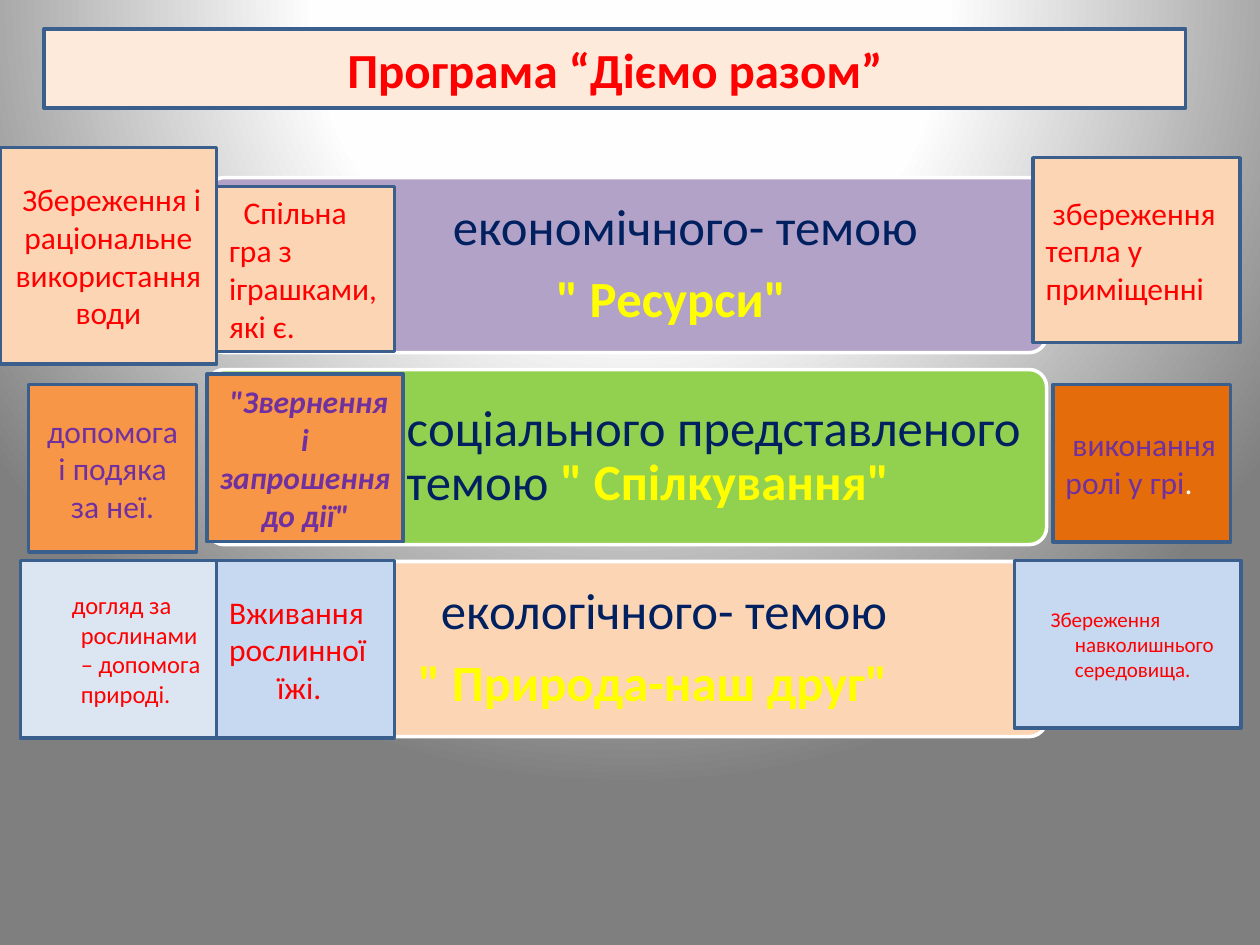
import dataclasses

import pptx
import pptx.dml.color
import pptx.enum.shapes
import pptx.enum.text
import pptx.oxml
import pptx.oxml.ns
import pptx.util

Cm = pptx.util.Cm
Pt = pptx.util.Pt
RGB = pptx.dml.color.RGBColor
SHAPE = pptx.enum.shapes.MSO_SHAPE
ALIGN = pptx.enum.text.PP_ALIGN

RED = RGB(0xFF, 0x00, 0x00)
PURPLE = RGB(0x70, 0x30, 0xA0)
NAVY = RGB(0x00, 0x20, 0x60)
YELLOW = RGB(0xFF, 0xFF, 0x00)
WHITE = RGB(0xFF, 0xFF, 0xFF)
BORDER = RGB(0x3A, 0x5F, 0x8C)
CREAM = RGB(0xFD, 0xEA, 0xDA)
LILAC = RGB(0xB3, 0xA2, 0xC7)
GREEN = RGB(0x92, 0xD0, 0x50)
PEACH = RGB(0xFC, 0xD5, 0xB5)
ORANGE = RGB(0xF7, 0x96, 0x46)
DARK_ORANGE = RGB(0xE4, 0x6C, 0x0A)
PALE_BLUE = RGB(0xDC, 0xE6, 0xF2)
LIGHT_BLUE = RGB(0xC6, 0xD9, 0xF1)

ROW_LEFT, ROW_TOP, ROW_PITCH = 4.17, 3.58, 3.87
ROW_WIDTH, ROW_HEIGHT = 16.93, 3.53
TEXT_OFFSET = 3.73
HANGING = 0.97


@dataclasses.dataclass
class Para:
    """A paragraph: (text, colour) runs, size, alignment and indents in cm."""
    runs: list
    size: int = 18
    align: ALIGN = ALIGN.LEFT
    first: float = 0
    left: float = 0
    bold: bool = False
    italic: bool = False


@dataclasses.dataclass
class Card:
    """A bordered box placed relative to its row, in cm."""
    dx: float
    dy: float
    width: float
    height: float
    fill: RGB
    paras: list


def write(tf, paras):
    """Fill a text frame with paragraphs."""
    tf.word_wrap = True
    tf.auto_size = pptx.enum.text.MSO_AUTO_SIZE.NONE
    tf.vertical_anchor = pptx.enum.text.MSO_ANCHOR.MIDDLE
    for i, para in enumerate(paras):
        p = tf.add_paragraph() if i else tf.paragraphs[0]
        p.alignment = para.align
        p.font.name, p.font.size = "Calibri", Pt(para.size)
        p.font.bold, p.font.italic = para.bold, para.italic
        pPr = p._p.get_or_add_pPr()
        pPr.set("marL", str(Cm(para.left)))
        pPr.set("indent", str(Cm(para.first)))
        for text, color in para.runs:
            r = p.add_run()
            r.text = text
            r.font.color.rgb = color
            if color == YELLOW:
                r.font.bold = True


def paint(sp, fill, line):
    """Give a shape a solid fill and a 2 pt outline."""
    sp.fill.solid()
    sp.fill.fore_color.rgb = fill
    sp.line.color.rgb = line
    sp.line.width = Pt(2)


def add_background(s):
    """Set the circular grey gradient behind the slide."""
    stops = "".join(
        f'<a:gs pos="{pos * 1000}"><a:srgbClr val="{color}"/></a:gs>'
        for pos, color in ((0, "FFFFFF"), (40, "FEFEFE"), (100, "7F7F7F")))
    s.element.cSld.insert(0, pptx.oxml.parse_xml(
        f'<p:bg {pptx.oxml.ns.nsdecls("p", "a")}><p:bgPr><a:gradFill>'
        f'<a:gsLst>{stops}</a:gsLst><a:path path="circle">'
        '<a:fillToRect l="50000" t="-80000" r="50000" b="180000"/></a:path>'
        '</a:gradFill><a:effectLst/></p:bgPr></p:bg>'))


def add_title(s, left, top, width, height):
    """Place and format the title placeholder."""
    sp = s.shapes.title
    sp.left, sp.top, sp.width, sp.height = map(Cm, (left, top, width, height))
    paint(sp, CREAM, BORDER)
    write(sp.text_frame, [Para([("Програма “Діємо разом”", RED)], 28, ALIGN.CENTER, bold=True)])


def add_band(s, left, top, width, height, fill, paras):
    """Draw a rounded band with its theme text on the right."""
    sp = s.shapes.add_shape(SHAPE.ROUNDED_RECTANGLE, Cm(left), Cm(top), Cm(width), Cm(height))
    sp.adjustments[0] = 0.1
    sp.shadow.inherit = False
    paint(sp, fill, WHITE)
    tf = s.shapes.add_textbox(Cm(left + TEXT_OFFSET), Cm(top),
                              Cm(width - TEXT_OFFSET), Cm(height)).text_frame
    tf.margin_left = tf.margin_right = tf.margin_top = tf.margin_bottom = Cm(0.3)
    write(tf, paras)
    for p in tf.paragraphs:
        p.line_spacing = 0.9
        p.space_after = Pt(10)


def add_row(s, left, top, width, height, fill, paras, cards):
    """Draw one theme band and the cards lying over it."""
    add_band(s, left, top, width, height, fill, paras)
    for card in cards:
        sp = s.shapes.add_shape(SHAPE.RECTANGLE, Cm(left + card.dx), Cm(top + card.dy),
                                Cm(card.width), Cm(card.height))
        sp.shadow.inherit = False
        paint(sp, card.fill, BORDER)
        write(sp.text_frame, card.paras)


ROWS = [
    (LILAC,
     [Para([("економічного- темою", NAVY)], 29, first=0.93),
      Para([('" Ресурси"', YELLOW)], 29, first=3.01)],
     [Card(0.2, 0.18, 3.58, 3.33, PEACH,
           [Para([("Спільна гра з іграшками, які є.", RED)], first=0.29)]),
      Card(-4.17, -0.61, 4.37, 4.37, PEACH,
           [Para([("Збереження і раціональне використання води", RED)],
                 align=ALIGN.CENTER, first=0.14)]),
      Card(16.66, -0.4, 4.17, 3.73, PEACH,
           [Para([("збереження тепла у приміщенні", RED)], first=0.14)])]),
    (GREEN,
     [Para([("соціального представленого темою ", NAVY), ('" Спілкування"', YELLOW)], 29)],
     [Card(0, 0.09, 3.96, 3.38, ORANGE,
           [Para([('"Звернення і запрошення до дії"', PURPLE)],
                 align=ALIGN.CENTER, first=0.14, bold=True, italic=True)]),
      Card(-3.59, 0.3, 3.38, 3.38, ORANGE,
           [Para([("допомога і подяка за неї.", PURPLE)], align=ALIGN.CENTER)]),
      Card(17.06, 0.3, 3.58, 3.18, DARK_ORANGE,
           [Para([("виконання ролі у грі", PURPLE), (".", WHITE)], first=0.14)])]),
    (PEACH,
     [Para([("екологічного- темою", NAVY)], 29, first=0.69),
      Para([('" Природа-наш друг"', YELLOW)], 29, first=0.23)],
     [Card(-3.76, -0.02, 3.96, 3.58, PALE_BLUE,
           [Para([("догляд за рослинами – допомога природі.", RED)], 14,
                 first=-0.18, left=HANGING)]),
      Card(0.2, -0.02, 3.58, 3.58, LIGHT_BLUE,
           [Para([(text, RED)], first=-HANGING, left=HANGING)
            for text in ("Вживання", "рослинної їжі.")]),
      Card(16.28, -0.02, 4.57, 3.38, LIGHT_BLUE,
           [Para([("Збереження навколишнього середовища.", RED)], 12,
                 first=-0.49, left=HANGING)])]),
]


def main():
    """Build the slide and save it."""
    prs = pptx.Presentation()
    prs.slide_width, prs.slide_height = Cm(25.4), Cm(19.05)
    s = prs.slides.add_slide(prs.slide_layouts[5])
    add_background(s)
    add_title(s, 0.89, 0.58, 23.01, 1.6)
    for i, row in enumerate(ROWS):
        add_row(s, ROW_LEFT, ROW_TOP + i * ROW_PITCH, ROW_WIDTH, ROW_HEIGHT, *row)
    prs.save("out.pptx")


if __name__ == "__main__":
    main()
